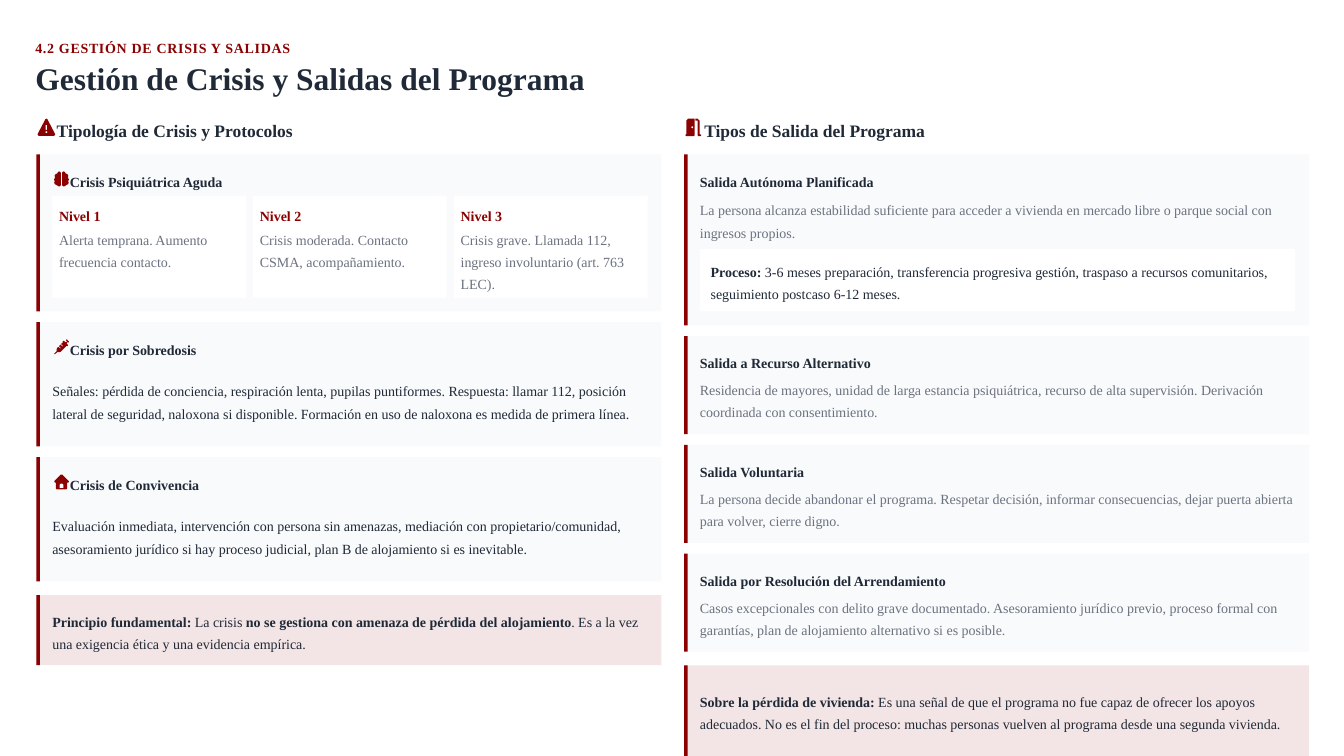
import math
from lxml import etree
from pptx import Presentation
from pptx.dml.color import RGBColor
from pptx.enum import shapes, text
from pptx.oxml import ns
from pptx.util import Cm, Pt

FONT = "Times New Roman"
COLORS = {"red": "8B0000", "ink": "1F2937", "gray": "6B7280",
          "card": "F9FAFB", "white": "FFFFFF"}
SLIDE_W, SLIDE_H = 33.87, 19.05
LEFT_X, RIGHT_X, CARDS_Y = 0.92, 17.24, 3.89
CARD_W, BAR_W, PAD = 15.75, 0.09, 0.4
TEXT_W, LINE_H = 15.17, 0.53
GAP, NOTE_GAP = 0.27, 0.35


def circle(cx, cy, radius, steps=12):
    angles = [2 * math.pi * i / steps for i in range(steps)]
    return [(cx + radius * math.cos(a), cy + radius * math.sin(a)) for a in angles]


# Icon outlines on a 100-unit grid; inner contours are holes
BRAIN_HALF = [(22, 14), (28, 3), (38, 0), (46, 8), (46, 92), (38, 100), (28, 98), (20, 92),
              (5, 84), (2, 74), (6, 64), (0, 54), (7, 43), (5, 28), (12, 17)]
ICONS = {
    "warning": [[(44, 4), (50, 0), (56, 4), (99, 86), (100, 93), (94, 98), (6, 98),
                 (0, 93), (1, 86)],
                [(46, 36), (54, 36), (54, 64), (46, 64)], circle(50, 77, 6)],
    "brain": [BRAIN_HALF, [(100 - x, y) for x, y in BRAIN_HALF]],
    "syringe": [[(84, 0), (80, 6), (86, 14), (80, 22), (66, 10), (58, 12), (60, 20), (48, 32),
                 (60, 44), (56, 48), (44, 36), (34, 46), (46, 58), (42, 62), (30, 50),
                 (22, 58), (18, 66), (18, 80), (2, 95), (6, 100), (21, 86), (38, 86),
                 (46, 82), (84, 43), (90, 46), (94, 40), (84, 26), (90, 19), (96, 22),
                 (100, 16)]],
    "house": [[(46, 2), (54, 2), (98, 46), (98, 54), (88, 56), (88, 94), (82, 100), (18, 100),
               (12, 94), (12, 56), (2, 54), (2, 46)],
              [(44, 62), (56, 62), (62, 68), (62, 92), (38, 92), (38, 68)]],
    "door": [[(6, 12), (16, 0), (54, 0), (54, 95), (50, 100), (4, 100), (0, 94), (6, 88)],
             circle(40, 50, 6),
             [(58, 0), (70, 0), (82, 12), (82, 88), (92, 94), (88, 100), (74, 100),
              (70, 94), (70, 12), (58, 12)]],
}

LEVELS = [("Nivel 1", "Alerta temprana. Aumento frecuencia contacto."),
          ("Nivel 2", "Crisis moderada. Contacto CSMA, acompañamiento."),
          ("Nivel 3", "Crisis grave. Llamada 112, ingreso involuntario (art. 763 LEC).")]
CRISES = [
    ("syringe", "Crisis por Sobredosis",
     "Señales: pérdida de conciencia, respiración lenta, pupilas puntiformes. Respuesta: "
     "llamar 112, posición lateral de seguridad, naloxona si disponible. Formación en uso "
     "de naloxona es medida de primera línea."),
    ("house", "Crisis de Convivencia",
     "Evaluación inmediata, intervención con persona sin amenazas, mediación con "
     "propietario/comunidad, asesoramiento jurídico si hay proceso judicial, plan B de "
     "alojamiento si es inevitable."),
]
EXITS = [
    ("Salida a Recurso Alternativo",
     "Residencia de mayores, unidad de larga estancia psiquiátrica, recurso de alta "
     "supervisión. Derivación coordinada con consentimiento."),
    ("Salida Voluntaria",
     "La persona decide abandonar el programa. Respetar decisión, informar consecuencias, "
     "dejar puerta abierta para volver, cierre digno."),
    ("Salida por Resolución del Arrendamiento",
     "Casos excepcionales con delito grave documentado. Asesoramiento jurídico previo, "
     "proceso formal con garantías, plan de alojamiento alternativo si es posible."),
]


def paint(sp, color, alpha=None):
    sp.shadow.inherit = False
    sp.fill.solid()
    sp.fill.fore_color.rgb = RGBColor.from_string(COLORS[color])
    sp.line.fill.background()
    if alpha:
        clr = sp._element.spPr.find(".//" + ns.qn("a:srgbClr"))
        etree.SubElement(clr, ns.qn("a:alpha")).set("val", str(alpha * 1000))


def add_rect(s, x, y, w, h, color, alpha=None):
    sp = s.shapes.add_shape(shapes.MSO_SHAPE.RECTANGLE, Cm(x), Cm(y), Cm(w), Cm(h))
    paint(sp, color, alpha)


def add_icon(s, name, x, y, size):
    first, *others = ICONS[name]
    builder = s.shapes.build_freeform(*first[0], scale=Cm(size) / 100)
    builder.add_line_segments(first[1:])
    for contour in others:
        builder.move_to(*contour[0])
        builder.add_line_segments(contour[1:])
    paint(builder.convert_to_shape(Cm(x), Cm(y)), "red")


def add_text(s, x, y, w, h, parts, color="ink", size=10, bold=False, spacing=1.3, tracking=0):
    """parts is a string, or a list of strings that alternate bold and regular."""
    tf = s.shapes.add_textbox(Cm(x), Cm(y), Cm(w), Cm(h)).text_frame
    tf.word_wrap = True
    tf.margin_left = tf.margin_right = tf.margin_top = tf.margin_bottom = 0
    tf.vertical_anchor = text.MSO_ANCHOR.MIDDLE
    p = tf.paragraphs[0]
    p.line_spacing = spacing
    mixed = isinstance(parts, list)
    for i, part in enumerate(parts if mixed else [parts]):
        r = p.add_run()
        r.text = part
        r.font.name, r.font.size = FONT, Pt(size)
        r.font.bold = i % 2 == 0 if mixed else bold
        r.font.color.rgb = RGBColor.from_string(COLORS[color])
        if tracking:
            r._r.get_or_add_rPr().set("spc", str(tracking))


def add_card(s, x, y, h, color="card", alpha=None):
    add_rect(s, x, y, CARD_W, h, color, alpha)
    add_rect(s, x, y, BAR_W, h, "red")


def add_note(s, x, y, h, parts):
    add_card(s, x, y, h, "red", 10)
    add_text(s, x + PAD, y + 0.35, TEXT_W, h - 0.7, parts)


def header(s, x, y):
    add_text(s, x, y, 32.28, LINE_H, "4.2 GESTIÓN DE CRISIS Y SALIDAS", "red",
             bold=True, tracking=50)
    add_text(s, x, y + 0.69, 32.5, 0.89, "Gestión de Crisis y Salidas del Programa",
             size=22.5, bold=True, spacing=0.9)


def column_heading(s, x, icon, title):
    add_icon(s, icon, x + 0.03, 2.99, 0.44)
    add_text(s, x + 0.51, 2.92, 15.47, 0.61, title, size=12.5, bold=True, spacing=1.2)


def crisis_title(s, x, y, icon, title):
    add_icon(s, icon, x + 0.44, y + 0.43, 0.38)
    add_text(s, x + 0.84, y + 0.36, 14.73, LINE_H, title, bold=True)


def crisis_column(s, x, y):
    column_heading(s, x, "warning", "Tipología de Crisis y Protocolos")
    # Acute crisis with its three levels
    add_card(s, x, y, 3.96)
    crisis_title(s, x, y, "brain", "Crisis Psiquiátrica Aguda")
    for i, (level, body) in enumerate(LEVELS):
        cell_x, cell_y = x + PAD + i * 5.06, y + 1.04
        add_rect(s, cell_x, cell_y, 4.88, 2.57, "white")
        add_text(s, cell_x + 0.17, cell_y + 0.18, 4.7, LINE_H, level, "red", bold=True)
        lines = 3 if i == 2 else 2
        add_text(s, cell_x + 0.17, cell_y + 0.81, 4.7, lines * LINE_H, body, "gray")
    y += 3.96 + GAP
    # Other crises
    for icon, title, body in CRISES:
        add_card(s, x, y, 3.13)
        crisis_title(s, x, y, icon, title)
        add_text(s, x + PAD, y + 1.07, TEXT_W, 1.73, body, spacing=1.4)
        y += 3.13 + GAP
    add_note(s, x, y - GAP + NOTE_GAP, 1.76, [
        "Principio fundamental:", " La crisis ",
        "no se gestiona con amenaza de pérdida del alojamiento",
        ". Es a la vez una exigencia ética y una evidencia empírica."])


def exit_column(s, x, y):
    column_heading(s, x, "door", "Tipos de Salida del Programa")
    # Planned exit with its process
    add_card(s, x, y, 4.31)
    add_text(s, x + PAD, y + 0.36, TEXT_W, LINE_H, "Salida Autónoma Planificada", bold=True)
    add_text(s, x + PAD, y + 1.04, TEXT_W, 1.14,
             "La persona alcanza estabilidad suficiente para acceder a vivienda en mercado "
             "libre o parque social con ingresos propios.", "gray", spacing=1.4)
    add_rect(s, x + PAD, y + 2.38, 15, 1.58, "white")
    add_text(s, x + 0.67, y + 2.64, 14.63, 2 * LINE_H, [
        "Proceso:", " 3-6 meses preparación, transferencia progresiva gestión, traspaso a "
        "recursos comunitarios, seguimiento postcaso 6-12 meses."])
    y += 4.31 + GAP
    # Other exits
    for title, body in EXITS:
        add_card(s, x, y, 2.47)
        add_text(s, x + PAD, y + 0.35, TEXT_W, LINE_H, title, bold=True)
        add_text(s, x + PAD, y + 1.05, TEXT_W, 2 * LINE_H, body, "gray")
        y += 2.47 + GAP
    y += NOTE_GAP - GAP
    add_note(s, x, y, SLIDE_H - y, [
        "Sobre la pérdida de vivienda:",
        " Es una señal de que el programa no fue capaz de ofrecer los apoyos adecuados. No es "
        "el fin del proceso: muchas personas vuelven al programa desde una segunda vivienda."])


def main():
    prs = Presentation()
    prs.slide_width, prs.slide_height = Cm(SLIDE_W), Cm(SLIDE_H)
    s = prs.slides.add_slide(prs.slide_layouts[6])
    header(s, 0.89, 0.89)
    crisis_column(s, LEFT_X, CARDS_Y)
    exit_column(s, RIGHT_X, CARDS_Y)
    prs.save("out.pptx")


if __name__ == "__main__":
    main()
